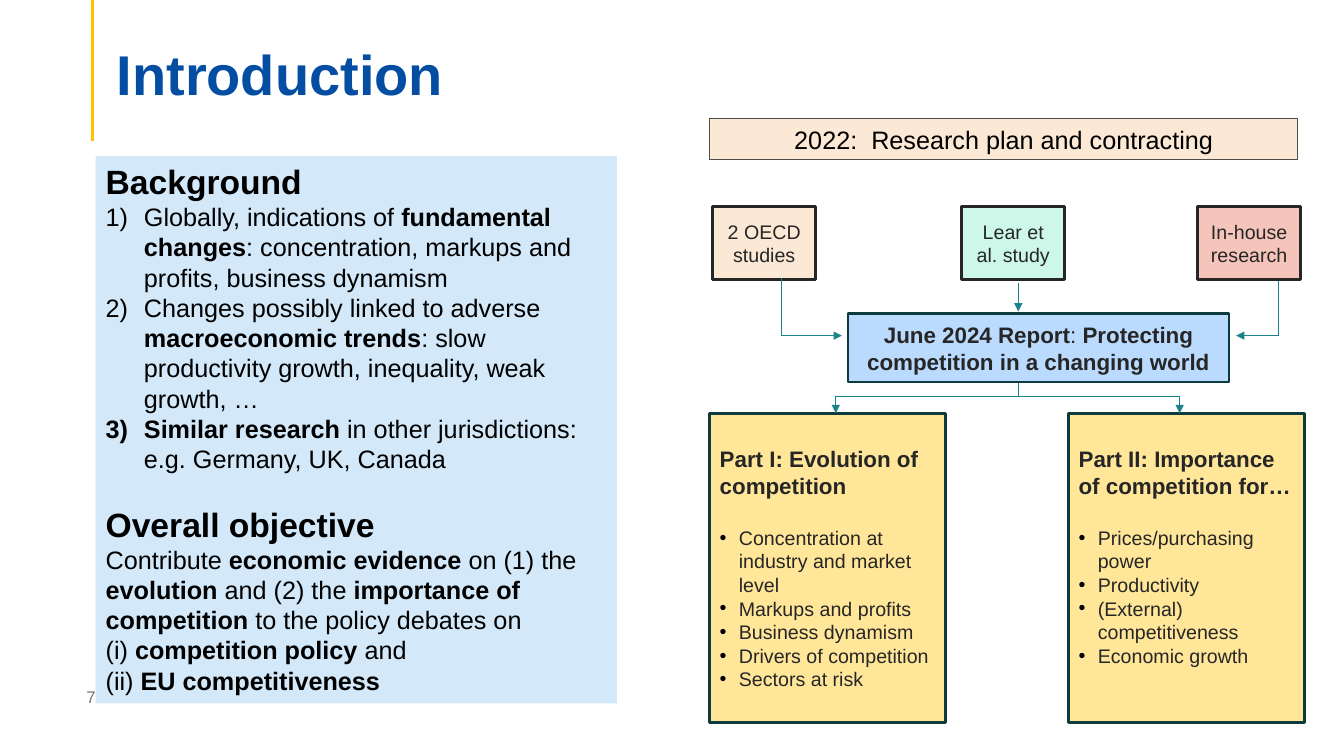
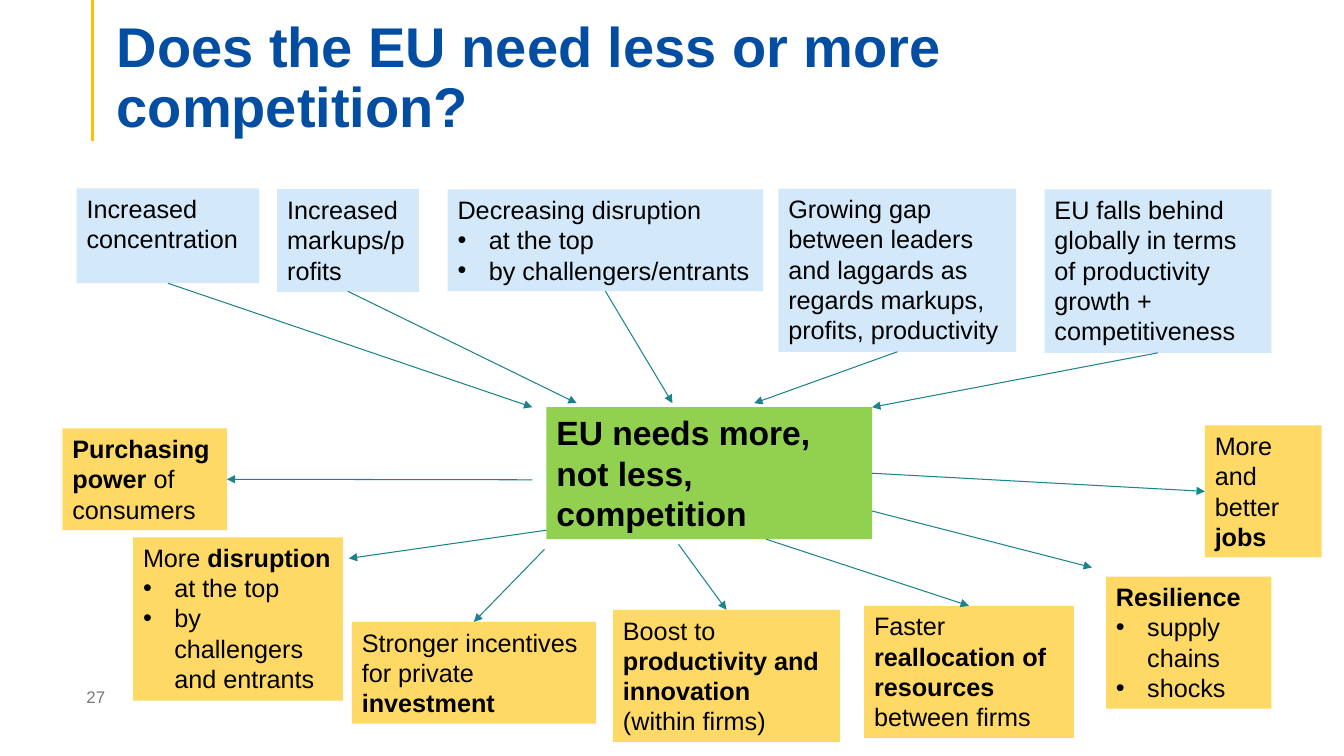
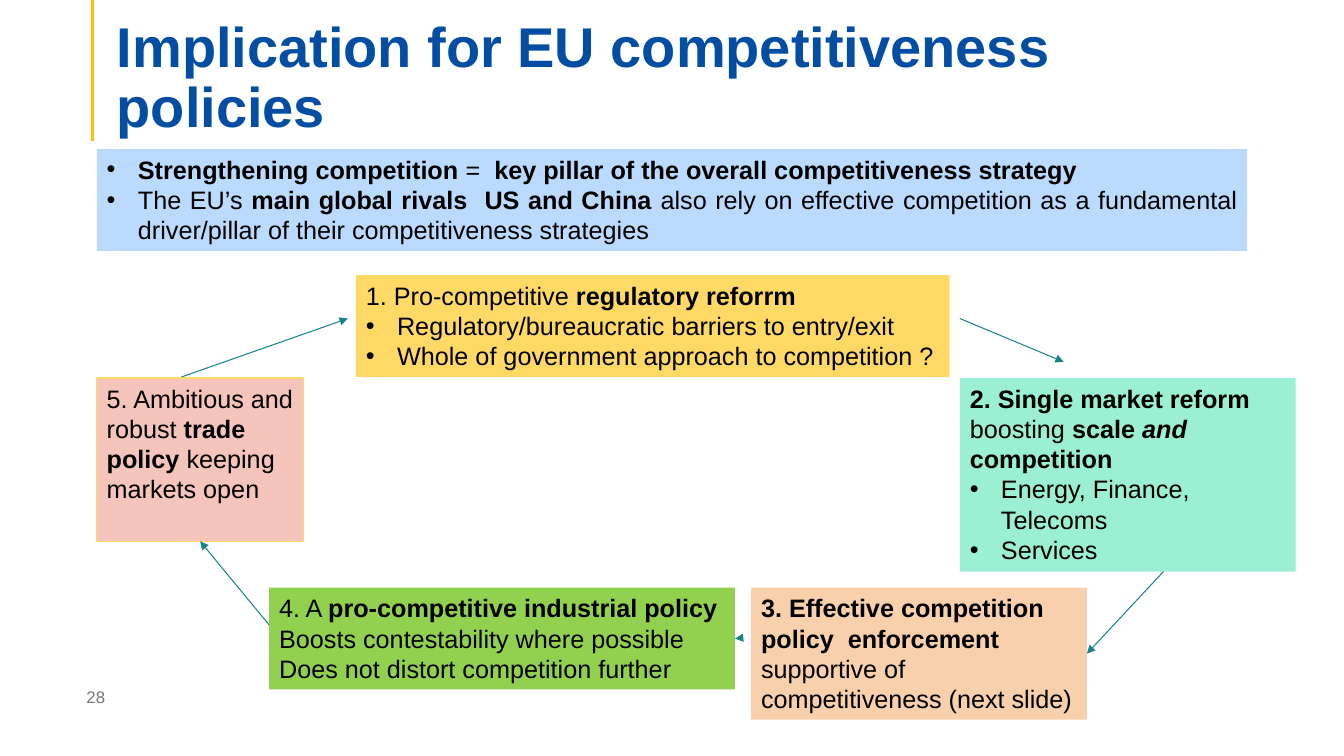
"""Build three slides on EU competition: introduction, need for competition and policies."""
from dataclasses import dataclass
from typing import Iterator, NamedTuple

from lxml import etree
from pptx import Presentation
from pptx.dml.color import RGBColor
from pptx.enum.shapes import MSO_CONNECTOR, MSO_SHAPE
from pptx.enum.text import MSO_ANCHOR, PP_ALIGN
from pptx.oxml.ns import qn
from pptx.presentation import Presentation as Deck
from pptx.shapes.autoshape import Shape
from pptx.shapes.connector import Connector
from pptx.slide import Slide
from pptx.text.text import TextFrame
from pptx.util import Emu, Inches, Pt

STRAIGHT = MSO_CONNECTOR.STRAIGHT
RECTANGLE = MSO_SHAPE.RECTANGLE
TOP, MIDDLE, BOTTOM = MSO_ANCHOR.TOP, MSO_ANCHOR.MIDDLE, MSO_ANCHOR.BOTTOM
LEFT, CENTER, JUSTIFY = PP_ALIGN.LEFT, PP_ALIGN.CENTER, PP_ALIGN.JUSTIFY

FONT = "Arial"
BLACK = RGBColor(0x00, 0x00, 0x00)
CHARCOAL = RGBColor(0x26, 0x26, 0x26)
GREY = RGBColor(0x4D, 0x4D, 0x4D)
PAGE_GREY = RGBColor(0x76, 0x76, 0x76)
TITLE_BLUE = RGBColor(0x03, 0x4E, 0xA2)
ACCENT = RGBColor(0xFF, 0xC0, 0x00)
TEAL = RGBColor(0x1B, 0x84, 0x8B)
DARK_TEAL = RGBColor(0x0D, 0x3A, 0x3D)
PALE_BLUE = RGBColor(0xD3, 0xE8, 0xF9)
BLUE = RGBColor(0xBB, 0xDB, 0xFE)
CREAM = RGBColor(0xFB, 0xE8, 0xD5)
PALE_MINT = RGBColor(0xCD, 0xF7, 0xE9)
MINT = RGBColor(0x9B, 0xEF, 0xD3)
PINK = RGBColor(0xF5, 0xC4, 0xBA)
PEACH = RGBColor(0xF8, 0xD1, 0xAC)
PALE_YELLOW = RGBColor(0xFF, 0xE6, 0x99)
YELLOW = RGBColor(0xFF, 0xD9, 0x66)
GREEN = RGBColor(0x92, 0xD0, 0x50)

GRID_CELL = Inches(0.1)
SIDE_TOP, SIDE_LEFT, SIDE_BOTTOM, SIDE_RIGHT = range(4)


class Para(NamedTuple):
    """A paragraph; ** toggles bold and ~ toggles italic."""
    text: str
    size: float = 18
    align: PP_ALIGN = LEFT
    marker: str = ""
    indent: float = 0
    before: float = 0


@dataclass(frozen=True)
class Box:
    """A filled text rectangle measured in grid cells."""
    left: float
    top: float
    width: float
    height: float
    fill: RGBColor
    text: tuple[Para, ...]
    outline: RGBColor | None = None
    outline_width: float = 0.75
    color: RGBColor = BLACK
    anchor: MSO_ANCHOR = TOP
    top_inset: float = 0.5
    wrap: bool = True


class Joint(NamedTuple):
    """The middle of one side of a named box."""
    box: str
    side: int


class Point(NamedTuple):
    """A free position in columns and rows."""
    column: float
    row: float


class Route(NamedTuple):
    """A chain of straight lines with optional arrowheads at its ends."""
    stops: tuple[Joint | Point, ...]
    arrow_at_start: bool = False
    arrow_at_end: bool = True


def cells(count: float) -> Emu:
    """Turn a number of grid cells into a length."""
    return Emu(round(count * GRID_CELL))


def listed(*texts: str, size: float = 18, marker: str = "•", indent: float = 3.1,
           before: float = 0, align: PP_ALIGN = LEFT) -> tuple[Para, ...]:
    """Make list items, with space above the first."""
    return tuple(Para(text, size, align, marker, indent, 0 if number else before)
                 for number, text in enumerate(texts))


def styled_pieces(text: str) -> Iterator[tuple[str, bool, bool]]:
    """Yield each piece of marked text with its bold and italic state."""
    for bold_index, part in enumerate(text.split("**")):
        for italic_index, piece in enumerate(part.split("~")):
            if piece:
                yield piece, bold_index % 2 == 1, italic_index % 2 == 1


def write(frame: TextFrame, paras: tuple[Para, ...], color: RGBColor) -> None:
    """Fill a text frame with styled paragraphs."""
    for number, para in enumerate(paras):
        paragraph = frame.add_paragraph() if number else frame.paragraphs[0]
        if para.marker:
            properties = paragraph._p.get_or_add_pPr()
            properties.set("marL", str(cells(para.indent)))
            properties.set("indent", str(-cells(para.indent)))
            tint = etree.SubElement(properties, qn("a:buClr"))
            etree.SubElement(tint, qn("a:srgbClr"), val=str(BLACK))
            if para.marker == "1)":
                etree.SubElement(properties, qn("a:buAutoNum"), type="arabicParenR")
            else:
                etree.SubElement(properties, qn("a:buFont"), typeface=FONT)
                etree.SubElement(properties, qn("a:buChar"), char=para.marker)
        paragraph.alignment = para.align
        if para.before:
            paragraph.space_before = Pt(para.before)
        paragraph.font.name = FONT
        paragraph.font.size = Pt(para.size)
        paragraph.font.color.rgb = color
        pieces = list(styled_pieces(para.text))
        all_bold = all(bold for _, bold, _ in pieces)
        paragraph.font.bold = all_bold
        for piece, bold, italic in pieces:
            for line_number, line in enumerate(piece.split("\n")):
                if line_number:
                    paragraph.add_line_break()
                if line:
                    run = paragraph.add_run()
                    run.text = line
                    if bold and not all_bold:
                        run.font.bold = True
                    if italic:
                        run.font.italic = True


def draw_box(slide: Slide, box: Box) -> Shape:
    """Draw one text rectangle."""
    shape = slide.shapes.add_shape(RECTANGLE, cells(box.left), cells(box.top),
                                   cells(box.width), cells(box.height))
    shape.shadow.inherit = False
    shape.fill.solid()
    shape.fill.fore_color.rgb = box.fill
    if box.outline is None:
        shape.line.fill.background()
    else:
        shape.line.color.rgb = box.outline
        shape.line.width = Pt(box.outline_width)
    frame = shape.text_frame
    frame.word_wrap = box.wrap
    frame.vertical_anchor = box.anchor
    frame.margin_top = cells(box.top_inset)
    write(frame, box.text, box.color)
    return shape


def draw_line(slide: Slide, start: Point, end: Point, color: RGBColor = TEAL,
              width: float = 0.75, heads: tuple[str, ...] = ()) -> Connector:
    """Draw one straight line with the given arrowhead elements."""
    line = slide.shapes.add_connector(STRAIGHT, cells(start.column), cells(start.row),
                                      cells(end.column), cells(end.row))
    line.line.color.rgb = color
    line.line.width = Pt(width)
    properties = line.element.spPr
    for head in heads:
        etree.SubElement(properties.find(qn("a:ln")), qn(head), type="triangle")
    etree.SubElement(properties, qn("a:effectLst"))
    return line


def locate(stop: Joint | Point, boxes: dict[str, Box]) -> Point:
    """Find where a stop lies on the grid."""
    if isinstance(stop, Point):
        return stop
    box = boxes[stop.box]
    across, down = ((0.5, 0), (0, 0.5), (0.5, 1), (1, 0.5))[stop.side]
    return Point(box.left + across * box.width, box.top + down * box.height)


def draw_diagram(slide: Slide, boxes: dict[str, Box], routes: list[Route]) -> None:
    """Draw the boxes, then the routes that join them."""
    shapes = {name: draw_box(slide, box) for name, box in boxes.items()}
    for route in routes:
        last = len(route.stops) - 2
        for leg, (start, end) in enumerate(zip(route.stops, route.stops[1:])):
            heads = (("a:headEnd",) if route.arrow_at_start and leg == 0 else ()) + (
                ("a:tailEnd",) if route.arrow_at_end and leg == last else ())
            line = draw_line(slide, locate(start, boxes), locate(end, boxes), heads=heads)
            if isinstance(start, Joint):
                line.begin_connect(shapes[start.box], start.side)
            if isinstance(end, Joint):
                line.end_connect(shapes[end.box], end.side)


def draw_label(slide: Slide, area: tuple[float, float, float, float], para: Para,
               color: RGBColor, anchor: MSO_ANCHOR) -> TextFrame:
    """Draw unfilled text in an area given in grid cells."""
    frame = slide.shapes.add_textbox(*map(cells, area)).text_frame
    frame.word_wrap = True
    frame.vertical_anchor = anchor
    write(frame, (para,), color)
    return frame


def start_slide(deck: Deck, title: str, page: int, title_top: float = 5.3) -> Slide:
    """Add a blank slide with the accent line, page number and title."""
    slide = deck.slides.add_slide(deck.slide_layouts[6])
    draw_line(slide, Point(9.2, 0), Point(9.2, 14), ACCENT, 2.25)
    draw_label(slide, (7.6, 67.1, 30, 4), Para(str(page), 12), PAGE_GREY, MIDDLE)
    heading = draw_label(slide, (10.6, title_top, 115, 8.6), Para(f"**{title}**", 40),
                         TITLE_BLUE, BOTTOM)
    heading.margin_bottom = 0
    heading.paragraphs[0].line_spacing = 0.9
    return slide


def build_introduction(deck: Deck) -> None:
    """Show the background, the objective and the structure of the report."""
    slide = start_slide(deck, "Introduction", 7, 2.1)
    boxes = {
        "background": Box(9.5, 15.5, 51.7, 54.3, PALE_BLUE, (
            Para("**Background**", 24),
            *listed("Globally, indications of **fundamental changes**: concentration, "
                    "markups and profits, business dynamism",
                    "Changes possibly linked to adverse **macroeconomic trends**: slow "
                    "productivity growth, inequality, weak growth, …",
                    "**Similar research** in other jurisdictions: e.g. Germany, UK, Canada",
                    marker="1)", indent=3.8),
            Para("**Overall objective**", 24, before=21.5),
            Para("Contribute **economic evidence** on (1) the **evolution** and (2) the "
                 "**importance of competition** to the policy debates on \n"
                 "(i) **competition policy** and \n(ii) **EU competitiveness**"))),
        "plan": Box(70.4, 11.8, 58.3, 4, CREAM, (
            Para("2022:  Research plan and contracting", align=CENTER),), GREY),
        "report": Box(84.1, 31.1, 37.8, 6.8, BLUE, (
            Para("**June 2024 Report**: **Protecting competition in a changing world**",
                 16, CENTER),), DARK_TEAL, 2, CHARCOAL, MIDDLE),
    }
    for left, study, fill in ((70.7, "2 OECD studies", CREAM),
                              (95.4, "Lear et al. study", PALE_MINT),
                              (118.8, "In-house research", PINK)):
        boxes[study] = Box(left, 20.5, 10.2, 7.2, fill, (Para(study, 14, CENTER),),
                           CHARCOAL, 2, CHARCOAL, MIDDLE)
    for left, part, topics in (
            (70.4, "Part I: Evolution of competition",
             ("Concentration at industry and market level", "Markups and profits",
              "Business dynamism", "Drivers of competition", "Sectors at risk")),
            (106, "Part II: Importance of competition for…",
             ("Prices/purchasing power", "Productivity", "(External) competitiveness",
              "Economic growth"))):
        boxes[part] = Box(left, 41, 23.4, 30.7, PALE_YELLOW, (
            Para(f"**{part}**", 16), *listed(*topics, size=14, indent=1.9, before=19)),
            DARK_TEAL, 2, CHARCOAL, top_inset=3.2)
    draw_diagram(slide, boxes, [
        Route((Point(126.8, 27.9), Point(126.8, 33.3), Point(122.6, 33.3))),
        Route((Point(101, 28.1), Point(101, 30.9))),
        Route((Point(77.5, 27.6), Point(77.5, 33.3), Point(83.5, 33.3))),
        Route((Point(101, 38), Point(101, 39.3)), arrow_at_end=False),
        Route((Point(82.9, 41), Point(82.9, 39.3), Point(117, 39.3), Point(117, 41)),
              arrow_at_start=True),
    ])


def build_need(deck: Deck) -> None:
    """Link market findings to the need for competition and its benefits."""
    slide = start_slide(deck, "Does the EU need less or more competition?", 27)
    boxes = {
        "concentration": Box(7.6, 18.7, 18.1, 9.4, PALE_BLUE,
                             (Para("Increased concentration"),)),
        "markups": Box(27.5, 18.8, 14, 10.1, PALE_BLUE,
                       (Para("Increased markups/profits"),), PALE_BLUE),
        "less disruption": Box(44.4, 18.8, 31.3, 10.1, PALE_BLUE, (
            Para("Decreasing disruption"),
            *listed("at the top", "by challengers/entrants")), wrap=False),
        "gap": Box(77.2, 18.7, 23.6, 16.2, PALE_BLUE, (
            Para("Growing gap between leaders and laggards as regards markups, "
                 "profits, productivity"),)),
        "falling behind": Box(103.6, 18.8, 22.5, 16.2, PALE_BLUE, (
            Para("EU falls behind globally in terms of productivity growth + "
                 "competitiveness"),)),
        "need": Box(54.2, 40.4, 32.3, 13.1, GREEN, (
            Para("**EU needs more, not less, competition**", 24),)),
        "purchasing power": Box(6.2, 42.5, 16.3, 10.1, YELLOW,
                                (Para("**Purchasing power** of consumers"),)),
        "more disruption": Box(13.2, 53.3, 20.8, 16.2, YELLOW, (
            Para("More **disruption**"),
            *listed("at the top", "by challengers and entrants"))),
        "investment": Box(34.9, 61.7, 24.2, 10.1, YELLOW, (
            Para("Stronger incentives for private **investment**"),)),
        "productivity": Box(60.8, 60.5, 22.5, 13.1, YELLOW, (
            Para("Boost to **productivity and innovation** (within firms)"),)),
        "reallocation": Box(85.7, 60.1, 20.8, 13.1, YELLOW, (
            Para("Faster **reallocation of resources** between firms"),)),
        "jobs": Box(119.5, 42.2, 11.6, 13.1, YELLOW,
                    (Para("More and better **jobs**"),)),
        "resilience": Box(109.7, 57.2, 16.4, 13.1, YELLOW, (
            Para("**Resilience**"), *listed("supply chains", "shocks"))),
    }
    causes = {"concentration": Point(52.8, 40.4), "markups": Point(57.2, 40),
              "less disruption": Point(66.7, 40), "gap": Point(74.8, 40),
              "falling behind": Point(86.5, 40.4)}
    effects = (
        (Point(52.8, 47.6), Joint("purchasing power", SIDE_RIGHT)),
        (Point(54.2, 52.6), Point(34.6, 55.4)),
        (Point(54, 54.5), Joint("investment", SIDE_TOP)),
        (Point(67.3, 54), Joint("productivity", SIDE_TOP)),
        (Point(76, 53.5), Joint("reallocation", SIDE_TOP)),
        (Joint("need", SIDE_RIGHT), Joint("jobs", SIDE_LEFT)),
        (Point(86.5, 50.7), Point(108.3, 56.3)),
    )
    draw_diagram(slide, boxes, [
        *(Route((Joint(cause, SIDE_BOTTOM), target)) for cause, target in causes.items()),
        *map(Route, effects),
    ])


def build_policies(deck: Deck) -> None:
    """Show the cycle of five policies behind competitiveness."""
    slide = start_slide(deck, "Implication for EU competitiveness policies", 28)
    boxes = {
        "strategy": Box(9.6, 14.8, 114.1, 10.1, BLUE, listed(
            "**Strengthening competition** =  **key pillar of the overall "
            "competitiveness strategy**",
            "The EU’s **main global rivals  US and China** also rely on effective "
            "competition as a fundamental driver/pillar of their competitiveness strategies",
            align=JUSTIFY)),
        "regulation": Box(35.3, 27.3, 58.9, 10.1, YELLOW, (
            Para("1. Pro-competitive **regulatory reforrm**"),
            *listed("Regulatory/bureaucratic barriers to entry/exit",
                    "Whole of government approach to competition ?")), wrap=False),
        "single market": Box(95.2, 37.5, 33.3, 19.2, MINT, (
            Para("**2. Single market reform** boosting **scale ~and~ competition**"),
            *listed("Energy, Finance, Telecoms", "Services"))),
        "enforcement": Box(74.5, 58.3, 33.3, 13.1, PEACH, (
            Para("**3. Effective competition policy  enforcement** supportive of "
                 "competitiveness (next slide)"),)),
        "industry": Box(26.7, 58.3, 46.2, 10.1, GREEN, (
            Para("4. A **pro-competitive industrial policy**"),
            Para("Boosts contestability where possible"),
            Para("Does not distort competition further")), wrap=False),
        "trade": Box(9.6, 37.5, 20.5, 16.2, PINK, (
            Para("5. Ambitious and robust **trade policy** keeping markets open"),),
            YELLOW),
    }
    draw_diagram(slide, boxes, [
        Route((Point(95.2, 31.6), Point(105.5, 35.9))),
        Route((Point(115.4, 56.7), Joint("enforcement", SIDE_RIGHT))),
        Route((Point(73.4, 63.3), Joint("industry", SIDE_RIGHT))),
        Route((Point(26.7, 62), Joint("trade", SIDE_BOTTOM))),
        Route((Point(18, 37.4), Point(34.5, 31.6))),
    ])


def main() -> None:
    """Build and save the presentation."""
    deck = Presentation()
    deck.slide_width, deck.slide_height = Inches(13.33), Inches(7.5)
    for build in (build_introduction, build_need, build_policies):
        build(deck)
    deck.save("out.pptx")


if __name__ == "__main__":
    main()
